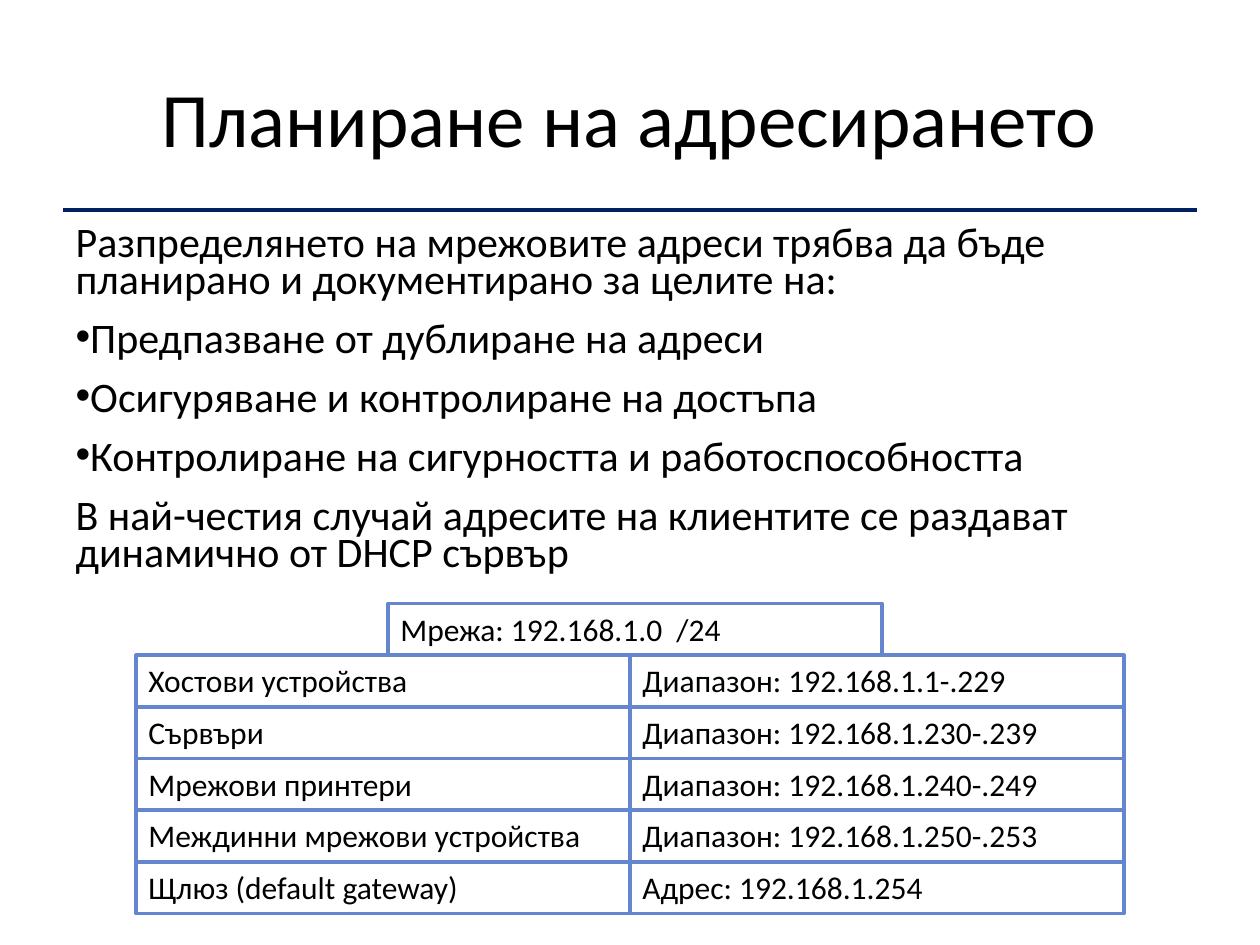
from lxml.etree import SubElement
from pptx import Presentation
from pptx.dml.color import RGBColor
from pptx.enum.shapes import MSO_CONNECTOR, MSO_SHAPE
from pptx.enum.text import MSO_ANCHOR, MSO_AUTO_SIZE, PP_ALIGN
from pptx.oxml.ns import qn
from pptx.util import Inches, Pt

BLACK = RGBColor(0x00, 0x00, 0x00)
WHITE = RGBColor(0xFF, 0xFF, 0xFF)
NAVY = RGBColor(0x00, 0x20, 0x60)
BLUE = RGBColor(0x65, 0x85, 0xCF)
FONT = "Calibri"

WIDTH, HEIGHT = Inches(10), Inches(7.5)
MARGIN = Inches(0.5)
CONTENT_WIDTH = WIDTH - 2 * MARGIN
CELL_WIDTH, CELL_HEIGHT = Inches(3.92), Inches(0.41)
GRID_LEFT, GRID_TOP = WIDTH // 2 - CELL_WIDTH, Inches(4.79)

TITLE = "Планиране на адресирането"
BODY = [  # text, bulleted
    ("Разпределянето на мрежовите адреси трябва да бъде планирано "
     "и документирано за целите на:", False),
    ("Предпазване от дублиране на адреси", True),
    ("Осигуряване и контролиране на достъпа", True),
    ("Контролиране на сигурността и работоспособността", True),
    ("В най-честия случай адресите на клиентите се раздават "
     "динамично от DHCP сървър", False),
]
NETWORK = "Мрежа: 192.168.1.0  /24"
ADDRESS_ROWS = [  # device, addresses
    ("Хостови устройства", "Диапазон: 192.168.1.1-.229"),
    ("Сървъри", "Диапазон: 192.168.1.230-.239"),
    ("Мрежови принтери", "Диапазон: 192.168.1.240-.249"),
    ("Междинни мрежови устройства", "Диапазон: 192.168.1.250-.253"),
    ("Щлюз (default gateway)", "Адрес: 192.168.1.254"),
]


def place(shape, top, height):
    """Span the content width at the given top and height in inches."""
    shape.left, shape.top = MARGIN, Inches(top)
    shape.width, shape.height = CONTENT_WIDTH, Inches(height)


def format_runs(para, size):
    for span in para.runs:
        span.font.name = FONT
        span.font.size = Pt(size)
        span.font.color.rgb = BLACK


def set_bullet(para, bulleted):
    """Remove the indent and switch the bullet on or off."""
    properties = para._p.get_or_add_pPr()
    properties.set("marL", "0")
    properties.set("indent", "0")
    if bulleted:
        SubElement(properties, qn("a:buChar")).set("char", "•")
    else:
        SubElement(properties, qn("a:buNone"))


def fill_title(title):
    place(title, 0.3, 1.25)
    frame = title.text_frame
    frame.text = TITLE
    frame.auto_size = MSO_AUTO_SIZE.NONE
    frame.vertical_anchor = MSO_ANCHOR.MIDDLE
    para = frame.paragraphs[0]
    para.alignment = PP_ALIGN.CENTER
    format_runs(para, 44)


def fill_body(body):
    place(body, 1.75, 4.95)
    frame = body.text_frame
    frame.text = "\n".join(text for text, _ in BODY)
    frame.auto_size = MSO_AUTO_SIZE.NONE
    for para, (_, bulleted) in zip(frame.paragraphs, BODY):
        para.line_spacing = 0.75
        para.space_before = para.space_after = Pt(6)
        set_bullet(para, bulleted)
        format_runs(para, 24)


def add_rule(page, top):
    rule = page.shapes.add_connector(
        MSO_CONNECTOR.STRAIGHT, MARGIN, Inches(top), WIDTH - MARGIN, Inches(top))
    rule.line.color.rgb = NAVY
    rule.line.width = Pt(2.25)
    SubElement(rule._element.spPr, qn("a:effectLst"))


def add_cell(group, column, row, text):
    """Add a bordered box at a column and row of the address grid."""
    box = group.shapes.add_shape(
        MSO_SHAPE.RECTANGLE, GRID_LEFT + int(column * CELL_WIDTH),
        GRID_TOP + row * CELL_HEIGHT, CELL_WIDTH, CELL_HEIGHT)
    box.shadow.inherit = False
    box.fill.solid()
    box.fill.fore_color.rgb = WHITE
    box.line.color.rgb = BLUE
    box.line.width = Pt(2)
    frame = box.text_frame
    frame.text = text
    frame.word_wrap = True
    frame.auto_size = MSO_AUTO_SIZE.SHAPE_TO_FIT_TEXT
    frame.vertical_anchor = MSO_ANCHOR.TOP
    para = frame.paragraphs[0]
    para.alignment = PP_ALIGN.LEFT
    format_runs(para, 18)


def add_address_plan(page):
    group = page.shapes.add_group_shape()
    add_cell(group, 0.51, 0, NETWORK)
    for row, texts in enumerate(ADDRESS_ROWS, start=1):
        for column, text in enumerate(texts):
            add_cell(group, column, row, text)


def main():
    deck = Presentation()
    deck.slide_width, deck.slide_height = WIDTH, HEIGHT
    page = deck.slides.add_slide(deck.slide_layouts[1])
    fill_title(page.shapes.title)
    fill_body(page.placeholders[1])
    add_rule(page, 1.67)
    add_address_plan(page)
    deck.save("out.pptx")


if __name__ == "__main__":
    main()
